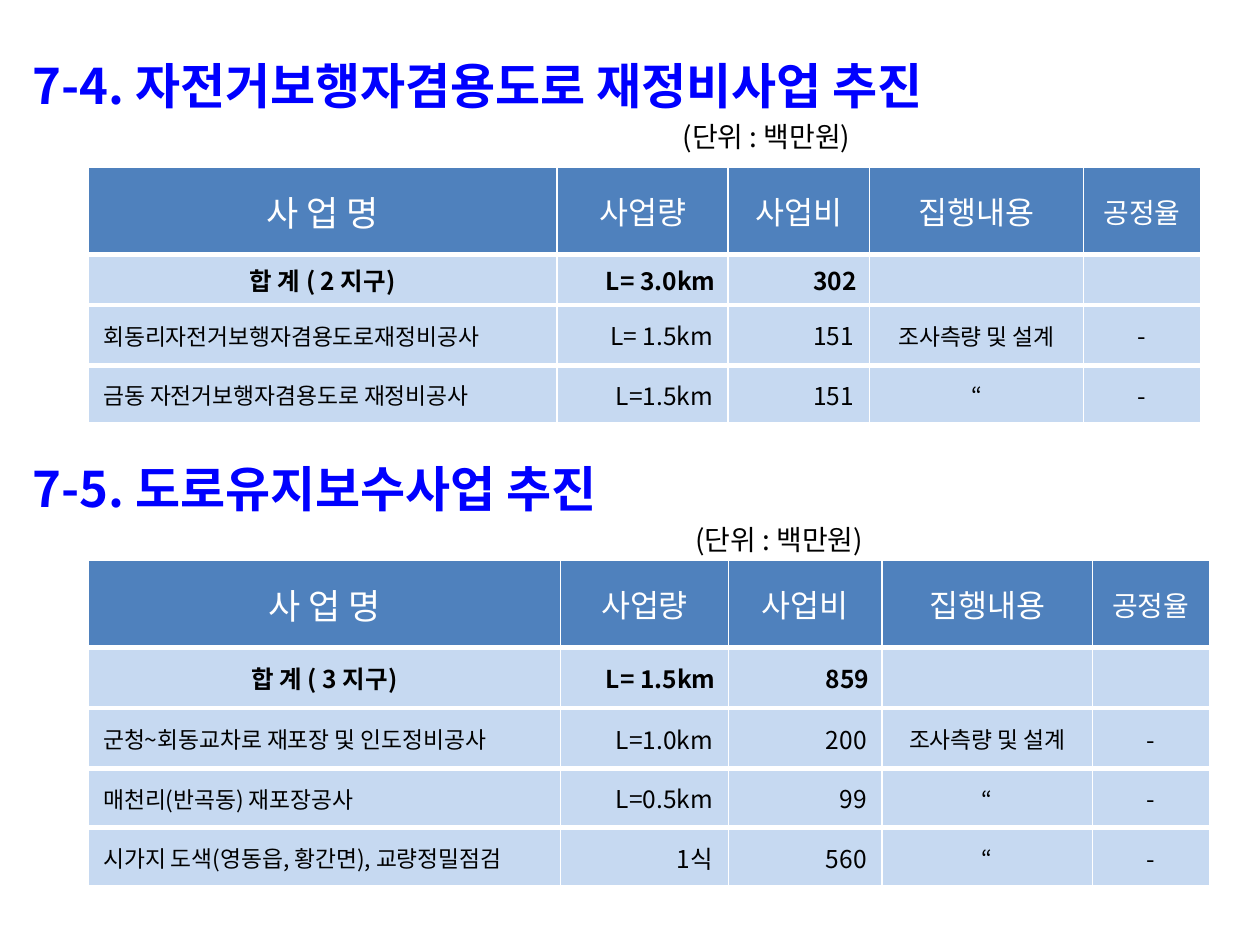
from lxml import etree
from pptx import Presentation
from pptx import util as u
from pptx.dml.color import RGBColor
from pptx.enum import text
from pptx.oxml.ns import qn

FONT = "Noto Sans CJK KR"
LEFT, CENTER, RIGHT = text.PP_ALIGN.LEFT, text.PP_ALIGN.CENTER, text.PP_ALIGN.RIGHT


def style(p, size, color, bold=False):
    """Format every run of a paragraph, for Latin and Korean letters alike."""
    for r in p.runs:
        r.font.size, r.font.bold, r.font.name = u.Pt(size), bold, FONT
        r.font.color.rgb = RGBColor.from_string(color)
        etree.SubElement(r.font._element, qn("a:ea"), typeface=FONT)


def set_borders(cell, top):
    """Draw white cell edges: thin sides, a thick bottom and the given top, in points."""
    tcPr = cell._tc.get_or_add_tcPr()
    for side, width in (("L", 1), ("R", 1), ("T", top), ("B", 3)):
        ln = etree.SubElement(tcPr, qn(f"a:ln{side}"), w=str(u.Pt(width)))
        fill = etree.SubElement(ln, qn("a:solidFill"))
        etree.SubElement(fill, qn("a:srgbClr"), val="FFFFFF")


header = ["사 업 명", "사업량", "사업비", "집행내용", "공정율"]
header_sizes = [20, 18, 18, 18, 16]
body_sizes = [13, 14, 14, 13, 14]
body_aligns = [LEFT, RIGHT, RIGHT, CENTER, CENTER]

sections = [
    dict(title="7-4. 자전거보행자겸용도로 재정비사업 추진",
         top=0.39, width=9.45, unit_indent=5.16, table_top=1.33,
         cols=[3.72, 1.36, 1.12, 1.7, 0.93], rows=[0.69, 0.4, 0.48, 0.47],
         data=[["합 계 ( 2 지구)", "L= 3.0km", "302", "", ""],
               ["회동리자전거보행자겸용도로재정비공사", "L= 1.5km", "151", "조사측량 및 설계", "-"],
               ["금동 자전거보행자겸용도로 재정비공사", "L=1.5km", "151", "“", "-"]]),
    dict(title="7-5. 도로유지보수사업 추진",
         top=3.59, width=9.69, unit_indent=5.26, table_top=4.45,
         cols=[3.75, 1.33, 1.22, 1.67, 0.93], rows=[0.69, 0.48, 0.48, 0.47, 0.47],
         data=[["합 계 ( 3 지구)", "L= 1.5km", "859", "", ""],
               ["군청~회동교차로 재포장 및 인도정비공사", "L=1.0km", "200", "조사측량 및 설계", "-"],
               ["매천리(반곡동) 재포장공사", "L=0.5km", "99", "“", "-"],
               ["시가지 도색(영동읍, 황간면), 교량정밀점검", "1식", "560", "“", "-"]]),
]

prs = Presentation()
prs.slide_width, prs.slide_height = u.Inches(10), u.Inches(7.5)
s = prs.slides.add_slide(prs.slide_layouts[6])

for section in sections:
    # Heading with the unit note beneath it
    sp = s.shapes.add_textbox(u.Inches(0.16), u.Inches(section["top"]),
                              u.Inches(section["width"]), u.Inches(0.89))
    tf = sp.text_frame
    tf.word_wrap = True
    title, unit = tf.paragraphs[0], tf.add_paragraph()
    title.text, unit.text = section["title"], "(단위 : 백만원)"
    title.space_before, unit.space_before = u.Pt(5.6), u.Pt(3.2)
    style(title, 28, "0000FF", True)
    style(unit, 16, "000000")
    unit._p.get_or_add_pPr().set("marL", str(u.Inches(section["unit_indent"])))

    # Project table: header, total, then one row for each project
    cols, rows = section["cols"], section["rows"]
    table = s.shapes.add_table(len(rows), len(cols), u.Inches(0.7), u.Inches(section["table_top"]),
                               u.Inches(sum(cols)), u.Inches(sum(rows))).table
    for column, width in zip(table.columns, cols):
        column.width = u.Inches(width)
    for row, height in zip(table.rows, rows):
        row.height = u.Inches(height)

    for i, values in enumerate([header] + section["data"]):
        for j, value in enumerate(values):
            cell = table.cell(i, j)
            set_borders(cell, 1 if i == 0 else 3)
            cell.fill.solid()
            cell.fill.fore_color.rgb = RGBColor.from_string("4F81BD" if i == 0 else "C6D9F1")
            cell.vertical_anchor = text.MSO_ANCHOR.MIDDLE
            cell.margin_left = cell.margin_right = u.Inches(0.12 if i > 1 else 0.1)
            p = cell.text_frame.paragraphs[0]
            if not value:
                etree.SubElement(p._p, qn("a:endParaRPr"), sz="1400")
                continue
            p.text = value
            p.alignment = CENTER if i == 0 or (i == 1 and j == 0) else body_aligns[j]
            size = header_sizes[j] if i == 0 else 14 if i == 1 else body_sizes[j]
            style(p, size, "FFFFFF" if i == 0 else "000000", i == 1)

prs.save("out.pptx")
